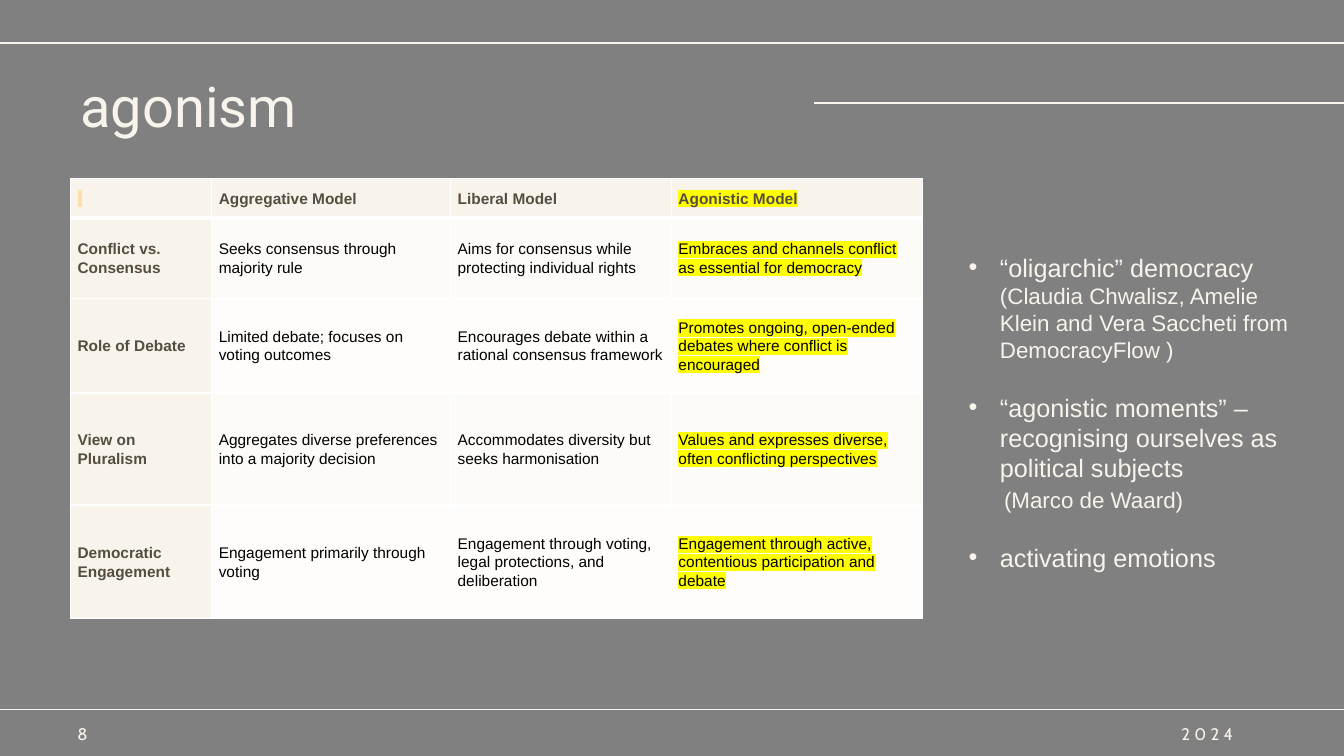
from lxml import etree
from pptx import Presentation
from pptx.dml.color import RGBColor
from pptx.enum.shapes import MSO_CONNECTOR
from pptx.enum.text import MSO_ANCHOR as Anchor
from pptx.oxml.ns import qn
from pptx.util import Inches, Pt

CREAM, GREY, BROWN, BLACK = "F8F4EC", "808080", "554D3D", "000000"
WHITE, YELLOW, PEACH = "FFFFFF", "FFFF00", "FFDFA8"
BANDS = ("FCFBF8", "FEFDFB")

COLUMN_WIDTHS = (1.4, 2.37, 2.19, 2.49)
ROW_HEIGHTS = (0.39, 0.8, 0.94, 1.11, 1.13)
MODELS = (
    (" ", "Aggregative Model", "Liberal Model", "Agonistic Model"),
    ("Conflict vs. Consensus", "Seeks consensus through majority rule",
     "Aims for consensus while protecting individual rights",
     "Embraces and channels conflict as essential for democracy"),
    ("Role of Debate", "Limited debate; focuses on voting outcomes",
     "Encourages debate within a rational consensus framework",
     "Promotes ongoing, open-ended debates where conflict is encouraged"),
    ("View on Pluralism", "Aggregates diverse preferences into a majority decision",
     "Accommodates diversity but seeks harmonisation",
     "Values and expresses diverse, often conflicting perspectives"),
    ("Democratic Engagement", "Engagement primarily through voting",
     "Engagement through voting, legal protections, and deliberation",
     "Engagement through active, contentious participation and debate"),
)


def rgb(color):
    return RGBColor.from_string(color)


def add_color(parent, tag, color):
    holder = etree.SubElement(parent, qn(tag))
    etree.SubElement(holder, qn("a:srgbClr"), val=color)
    return holder


def write(paragraph, text, size=18, font="Arial", color=CREAM, bold=False,
          highlight=None, tracking=0):
    """Add one formatted run to a paragraph."""
    run = paragraph.add_run()
    run.text = text
    run.font.size = Pt(size)
    run.font.bold = bold
    run.font.color.rgb = rgb(color)
    properties = run.font._element
    if highlight:
        add_color(properties, "a:highlight", highlight)
    if tracking:
        properties.set("spc", str(tracking * 100))
    run.font.name = font


def text_frame(slide, left, top, width, height, anchor=Anchor.MIDDLE):
    box = slide.shapes.add_textbox(*map(Inches, (left, top, width, height)))
    frame = box.text_frame
    frame.word_wrap = True
    frame.vertical_anchor = anchor
    return frame


def indent(paragraph, left, bullet=None):
    properties = paragraph._p.get_or_add_pPr()
    properties.set("marL", str(Inches(left)))
    if bullet:
        properties.set("indent", str(-Inches(left)))
        etree.SubElement(properties, qn("a:buFont"), typeface="Arial")
        etree.SubElement(properties, qn("a:buChar"), char=bullet)


def draw_rules(slide, right):
    for left, y in ((8.07, 1.02), (0, 0.43), (0, 7.04)):
        rule = slide.shapes.add_connector(
            MSO_CONNECTOR.STRAIGHT, *map(Inches, (left, y, right, y)))
        rule.line.color.rgb = rgb(CREAM)
        rule.line.width = Pt(1.25)
        etree.SubElement(rule._element.spPr, qn("a:effectLst"))


def draw_title(slide, *box):
    paragraph = text_frame(slide, *box).paragraphs[0]
    paragraph.line_spacing = 0.9
    write(paragraph, "agonism", size=40, font="Roboto")


def draw_footer(slide, top, height):
    for left, label in ((0.67, "8"), (11.62, "2024")):
        frame = text_frame(slide, left, top, 1.04, height)
        write(frame.paragraphs[0], label, size=12, font="Cabin", tracking=3)


def draw_borders(cell, bottom):
    properties = cell._tc.get_or_add_tcPr()
    for position, (side, width) in enumerate(
            (("L", 1), ("R", 1), ("T", 1), ("B", bottom))):
        border = etree.Element(qn(f"a:ln{side}"), w=str(Pt(width)))
        add_color(border, "a:solidFill", WHITE)
        properties.insert(position, border)


def fill_cell(cell, text, row, column):
    is_label = row == 0 or column == 0
    cell.fill.solid()
    cell.fill.fore_color.rgb = rgb(CREAM if is_label else BANDS[(row - 1) % 2])
    draw_borders(cell, bottom=3 if row == 0 else 1)
    cell.vertical_anchor = Anchor.MIDDLE
    cell.margin_left = cell.margin_right = Inches(0.07)
    cell.margin_top = cell.margin_bottom = 0
    paragraph = cell.text_frame.paragraphs[0]
    paragraph.line_spacing = 1.07
    paragraph.space_after = Pt(8)
    highlight = YELLOW if column == 3 else PEACH if row == column == 0 else None
    write(paragraph, text, size=11, color=BROWN if is_label else BLACK,
          bold=is_label, highlight=highlight)


def draw_model_table(slide, left, top):
    table = slide.shapes.add_table(
        len(ROW_HEIGHTS), len(COLUMN_WIDTHS), Inches(left), Inches(top),
        Inches(sum(COLUMN_WIDTHS)), Inches(sum(ROW_HEIGHTS))).table
    for column, width in zip(table.columns, COLUMN_WIDTHS):
        column.width = Inches(width)
    for row, height in zip(table.rows, ROW_HEIGHTS):
        row.height = Inches(height)
    for r, texts in enumerate(MODELS):
        for c, text in enumerate(texts):
            fill_cell(table.cell(r, c), text, r, c)


def draw_remarks(slide, *box):
    frame = text_frame(slide, *box, anchor=Anchor.TOP)
    # Each remark: space before, left indent, bullet, runs with their sizes
    remarks = (
        (0, 0.31, "•", (("“oligarchic” democracy ", 18),
                        ("(Claudia Chwalisz, Amelie Klein and Vera Saccheti "
                         "from DemocracyFlow )", 16))),
        (21, 0.31, "•", (("“agonistic moments” – recognising ourselves "
                          "as political subjects", 18),)),
        (2, 0.35, None, (("(Marco de Waard)", 16),)),
        (21, 0.31, "•", (("activating emotions", 18),)),
    )
    for i, (gap, left, bullet, runs) in enumerate(remarks):
        paragraph = frame.add_paragraph() if i else frame.paragraphs[0]
        paragraph.space_before = Pt(gap)
        indent(paragraph, left, bullet)
        for text, size in runs:
            write(paragraph, text, size=size)


def main():
    deck = Presentation()
    deck.slide_width, deck.slide_height = Inches(13.33), Inches(7.5)
    slide = deck.slides.add_slide(deck.slide_layouts[6])
    slide.background.fill.solid()
    slide.background.fill.fore_color.rgb = rgb(GREY)

    draw_rules(slide, right=13.33)
    draw_title(slide, 0.7, 0.54, 5.19, 1.09)
    draw_footer(slide, top=7.13, height=0.3)
    draw_model_table(slide, left=0.7, top=1.77)
    draw_remarks(slide, 9.51, 2.45, 3.43, 3.33)
    deck.save("out.pptx")


if __name__ == "__main__":
    main()
